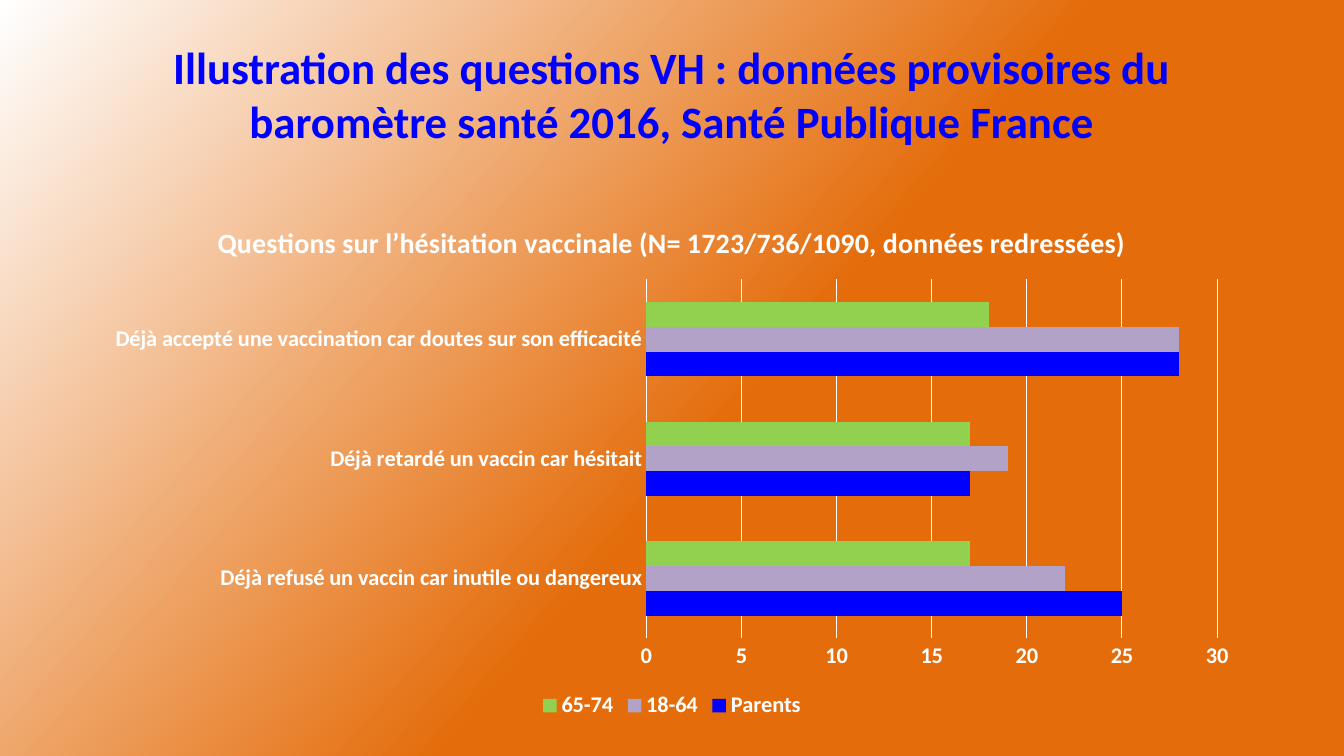
import pptx
import pptx.util
import pptx.chart.data
import pptx.dml.color
import pptx.enum.chart
import pptx.enum.text

Pt = pptx.util.Pt
FONT = "Calibri"
COLORS = {"orange": "E46C0A", "white": "FFFFFF", "blue": "0000FF",
          "purple": "B3A2C7", "green": "92D050"}


def rgb(name):
    return pptx.dml.color.RGBColor.from_string(COLORS[name])


def style(font, size, color, bold=True):
    font.name = FONT
    font.size = Pt(size)
    font.bold = bold
    font.color.rgb = rgb(color)


prs = pptx.Presentation()
prs.slide_width, prs.slide_height = Pt(960), Pt(540)
s = prs.slides.add_slide(prs.slide_layouts[6])

# Background gradient, white in the top left corner
fill = s.background.fill
fill.gradient()
fill.gradient_angle = 139
for stop, (position, color) in zip(fill.gradient_stops, [(0.45, "orange"), (1, "white")]):
    stop.position = position
    stop.color.rgb = rgb(color)

# Slide title
tf = s.shapes.add_textbox(Pt(48), Pt(21.6), Pt(864), Pt(90)).text_frame
tf.word_wrap = True
tf.vertical_anchor = pptx.enum.text.MSO_ANCHOR.MIDDLE
p = tf.paragraphs[0]
p.text = "Illustration des questions VH : données provisoires du baromètre santé 2016, Santé Publique France"
p.alignment = pptx.enum.text.PP_ALIGN.CENTER
style(p.runs[0].font, 32, "blue")

# Chart data
series = [("Parents", (25, 17, 28), "blue"),
          ("18-64", (22, 19, 28), "purple"),
          ("65-74", (17, 17, 18), "green")]
data = pptx.chart.data.CategoryChartData(number_format="General")
data.categories = ["Déjà refusé un vaccin car inutile ou dangereux",
                   "Déjà retardé un vaccin car hésitait",
                   "Déjà accepté une vaccination car doutes sur son efficacité"]
for name, values, color in series:
    data.add_series(name, values)

# Bar chart
chart = s.shapes.add_chart(pptx.enum.chart.XL_CHART_TYPE.BAR_CLUSTERED,
                           Pt(66), Pt(144), Pt(828), Pt(373), data).chart
style(chart.font, 10, "white", bold=False)
plot = chart.plots[0]
plot.gap_width = 182
plot.vary_by_categories = False
for bars, (name, values, color) in zip(plot.series, series):
    bars.format.fill.solid()
    bars.format.fill.fore_color.rgb = rgb(color)

# Chart title
chart.has_title = True
p = chart.chart_title.text_frame.paragraphs[0]
p.text = "Questions sur l’hésitation vaccinale (N= 1723/736/1090, données redressées)"
style(p.runs[0].font, 20, "white")
chart.chart_title.include_in_layout = False

# Axes and gridlines
for axis in (chart.category_axis, chart.value_axis):
    axis.major_tick_mark = pptx.enum.chart.XL_TICK_MARK.NONE
    axis.minor_tick_mark = pptx.enum.chart.XL_TICK_MARK.NONE
    style(axis.tick_labels.font, 16, "white")
chart.value_axis.minimum_scale = 0
chart.value_axis.maximum_scale = 30
chart.value_axis.major_unit = 5
chart.value_axis.format.line.fill.background()
chart.value_axis.has_major_gridlines = True
for line in (chart.category_axis.format.line, chart.value_axis.major_gridlines.format.line):
    line.color.rgb = rgb("white")
    line.width = Pt(0.75)

# Legend
chart.has_legend = True
chart.legend.position = pptx.enum.chart.XL_LEGEND_POSITION.BOTTOM
chart.legend.include_in_layout = False
style(chart.legend.font, 16, "white")

prs.save("out.pptx")
